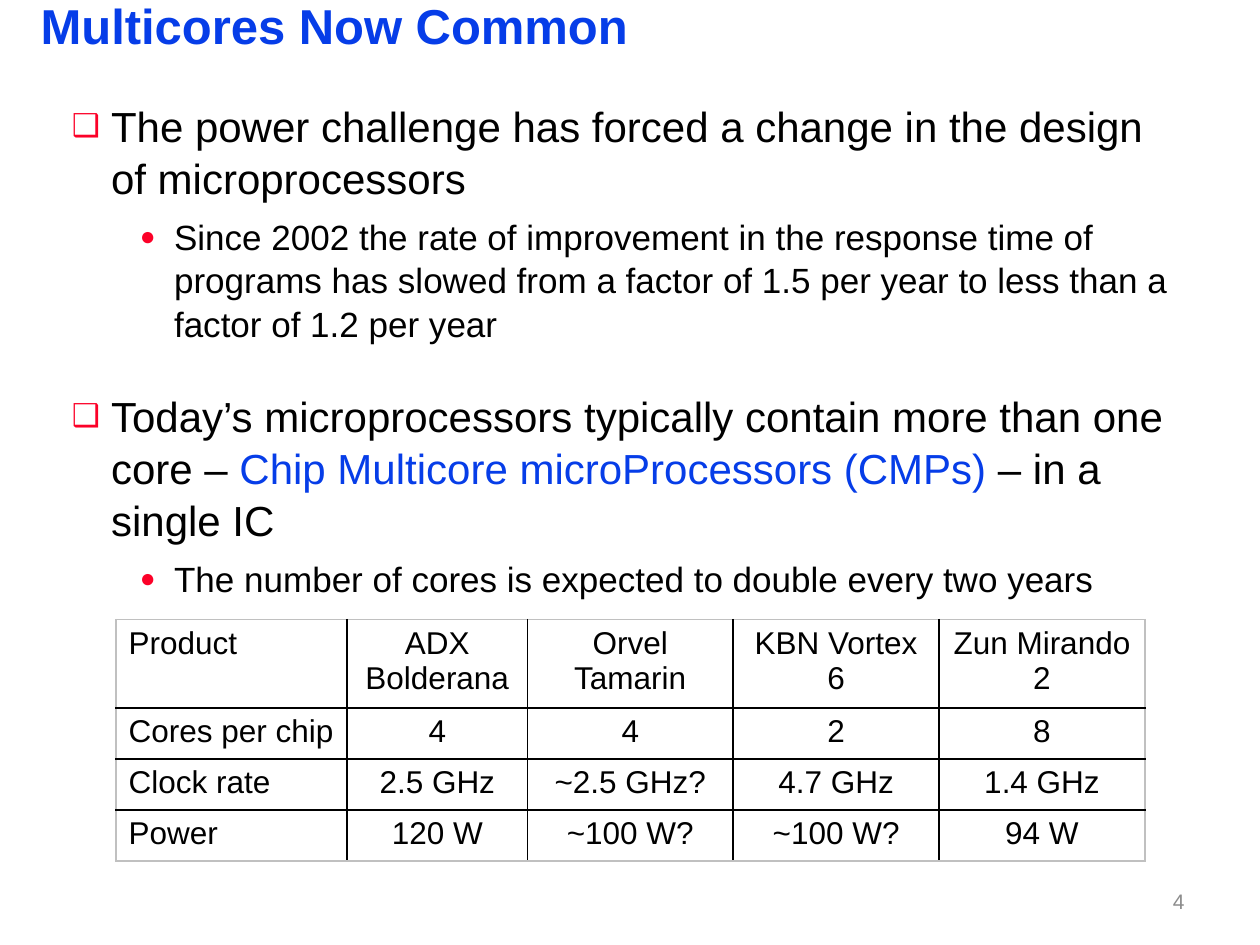
"""Builds a slide on multicore processors with bullets and a comparison table."""
from dataclasses import dataclass
from typing import Optional

from lxml import etree
from pptx import Presentation
from pptx.dml.color import RGBColor
from pptx.enum.text import MSO_ANCHOR, PP_ALIGN
from pptx.oxml.ns import qn
from pptx.util import Cm, Pt

LEFT, CENTER, RIGHT = PP_ALIGN.LEFT, PP_ALIGN.CENTER, PP_ALIGN.RIGHT
TOP, MIDDLE = MSO_ANCHOR.TOP, MSO_ANCHOR.MIDDLE
BLUE = RGBColor(0x06, 0x3D, 0xE8)
RED = RGBColor(0xFC, 0x01, 0x28)
BLACK = RGBColor(0, 0, 0)
GRAY = RGBColor(0x8C, 0x8C, 0x8C)
SILVER = RGBColor(0xC0, 0xC0, 0xC0)
FONT = "Arial"


@dataclass
class Level:
    char: str
    size: int
    margin: float
    hanging: float


@dataclass
class Bullet:
    level: Level
    runs: list[tuple[str, RGBColor]]
    before: int = 6


MAIN = Level("❑", 24, 0.79, 0.79)
SUB = Level("●", 20, 2.06, 0.69)
BULLETS = [
    Bullet(MAIN, [("The power challenge has forced a change in the design of microprocessors", BLACK)]),
    Bullet(SUB, [("Since 2002 the rate of improvement in the response time of programs has slowed "
                  "from a factor of 1.5 per year to less than a factor of 1.2 per year", BLACK)]),
    Bullet(MAIN, [("Today’s microprocessors typically contain more than one core – ", BLACK),
                  ("Chip Multicore microProcessors (CMPs) ", BLUE),
                  ("– in a single IC", BLACK)], 25),
    Bullet(SUB, [("The number of cores is expected to double every two years", BLACK)]),
]
ROWS = [
    ["Product", "ADX Bolderana", "Orvel Tamarin", "KBN Vortex 6", "Zun Mirando 2"],
    ["Cores per chip", "4", "4", "2", "8"],
    ["Clock rate", "2.5 GHz", "~2.5 GHz?", "4.7 GHz", "1.4 GHz"],
    ["Power", "120 W", "~100 W?", "~100 W?", "94 W"],
]
COL_WIDTHS = [4.66, 3.63, 4.15, 4.15, 4.15]
ROW_HEIGHTS = [1.68, 1.03, 1.03, 1.03]


def add_run(p, text: str, size: int, color: RGBColor, bold: bool = False) -> None:
    r = p.add_run()
    r.text = text
    for name, value in {"name": FONT, "size": Pt(size), "bold": bold}.items():
        setattr(r.font, name, value)
    r.font.color.rgb = color


def add_box(s, left: float, top: float, width: float, height: float,
            wrap: bool = True, anchor=TOP):
    tf = s.shapes.add_textbox(Cm(left), Cm(top), Cm(width), Cm(height)).text_frame
    settings = {"word_wrap": wrap, "vertical_anchor": anchor,
                "margin_left": Cm(0.18), "margin_right": Cm(0.18),
                "margin_top": Cm(0.08), "margin_bottom": Cm(0.08)}
    for name, value in settings.items():
        setattr(tf, name, value)
    return tf


def add_bullet(p, bullet: Bullet) -> None:
    level = bullet.level
    p.line_spacing = 1.04
    p.space_before = Pt(bullet.before)
    p.level = 1 if level is SUB else 0
    pPr = p._p.get_or_add_pPr()
    pPr.set("marL", str(Cm(level.margin)))
    pPr.set("indent", str(-Cm(level.hanging)))
    color = etree.SubElement(pPr, qn("a:buClr"))
    etree.SubElement(color, qn("a:srgbClr"), val=str(RED))
    etree.SubElement(pPr, qn("a:buSzPct"), val="75000")
    etree.SubElement(pPr, qn("a:buFont"), typeface=FONT)
    etree.SubElement(pPr, qn("a:buChar"), char=level.char)
    for text, run_color in bullet.runs:
        add_run(p, text, level.size, run_color)


def set_borders(cell, outer: dict[str, bool]) -> None:
    tcPr = cell._tc.get_or_add_tcPr()
    for side, is_outer in outer.items():
        ln = etree.SubElement(tcPr, qn(f"a:ln{side}"), w=str(Pt(1)))
        fill = etree.SubElement(ln, qn("a:solidFill"))
        etree.SubElement(fill, qn("a:srgbClr"), val=str(SILVER if is_outer else BLACK))


def add_product_table(s, left: float, top: float) -> None:
    n_rows, n_cols = len(ROWS), len(COL_WIDTHS)
    table = s.shapes.add_table(n_rows, n_cols, Cm(left), Cm(top),
                               Cm(sum(COL_WIDTHS)), Cm(sum(ROW_HEIGHTS))).table
    table.first_row = table.horz_banding = False
    for column, width in zip(table.columns, COL_WIDTHS):
        column.width = Cm(width)
    for i, (row, height) in enumerate(zip(ROWS, ROW_HEIGHTS)):
        table.rows[i].height = Cm(height)
        for j, text in enumerate(row):
            cell = table.cell(i, j)
            set_borders(cell, {"L": j == 0, "R": j == n_cols - 1,
                               "T": i == 0, "B": i == n_rows - 1})
            cell.fill.background()
            p = cell.text_frame.paragraphs[0]
            p.alignment = CENTER if j else LEFT
            add_run(p, text, 18, BLACK)


def add_line(tf, text: str, size: int, color: RGBColor, bold: bool = False,
             align=LEFT, spacing: Optional[float] = None) -> None:
    p = tf.paragraphs[0]
    p.alignment = align
    p.line_spacing = spacing
    add_run(p, text, size, color, bold)


def main() -> None:
    prs = Presentation()
    prs.slide_width, prs.slide_height = Cm(25.4), Cm(19.05)
    s = prs.slides.add_slide(prs.slide_layouts[6])

    title = add_box(s, 0.64, 0, 12.34, 1.19, wrap=False)
    add_line(title, "Multicores Now Common", 28, BLUE, bold=True, spacing=0.87)

    body = add_box(s, 1.27, 1.9, 22.76, 11.05)
    for i, bullet in enumerate(BULLETS):
        add_bullet(body.add_paragraph() if i else body.paragraphs[0], bullet)

    add_product_table(s, 2.34, 12.49)

    number = add_box(s, 18.21, 17.65, 5.92, 1.02, anchor=MIDDLE)
    number.margin_right = Cm(0.25)
    add_line(number, "4", 12, GRAY, align=RIGHT)
    prs.save("out.pptx")


if __name__ == "__main__":
    main()
